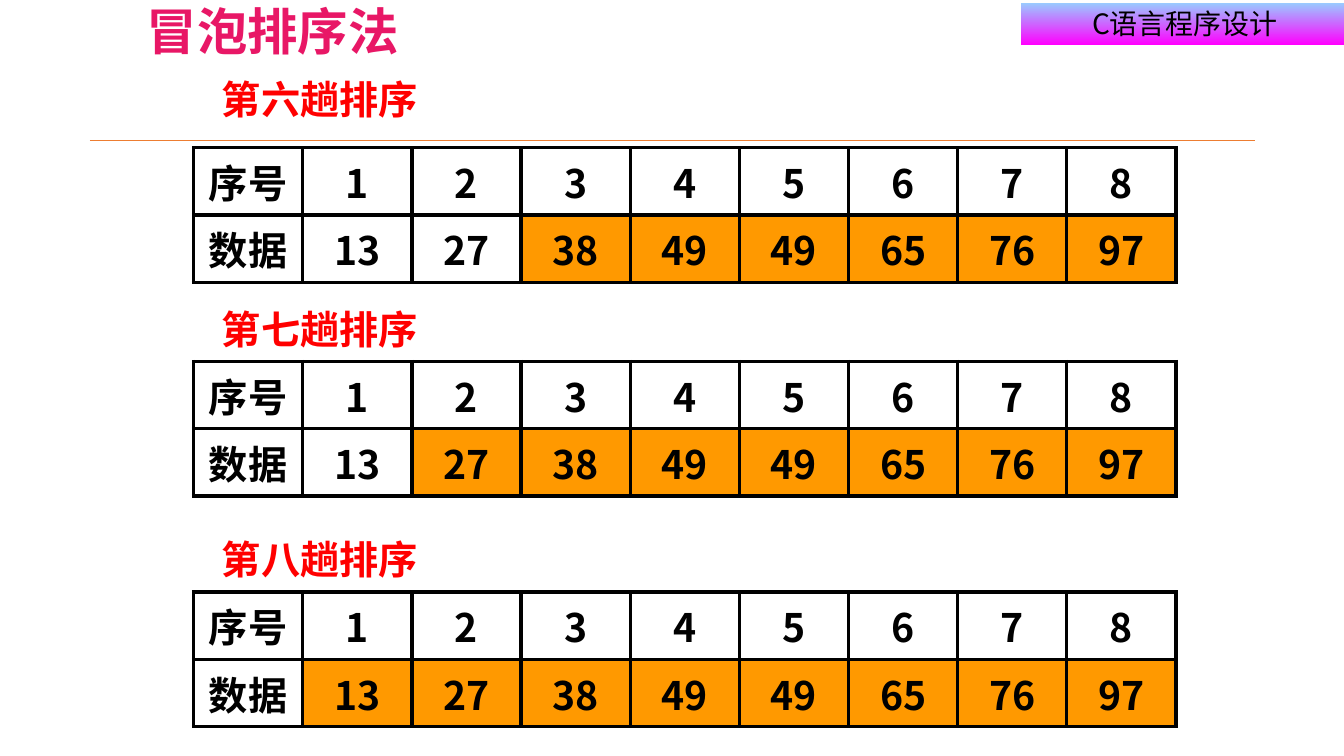
import pptx
import pptx.dml.color
import pptx.enum.shapes
import pptx.enum.text
import pptx.oxml
import pptx.oxml.ns
import pptx.util

Pt = pptx.util.Pt
RGBColor = pptx.dml.color.RGBColor
ANCHOR = pptx.enum.text.MSO_ANCHOR

BLACK = RGBColor(0x00, 0x00, 0x00)
RED = RGBColor(0xFF, 0x00, 0x00)
PINK = RGBColor(0xE8, 0x17, 0x66)
SKY = RGBColor(0x99, 0xCC, 0xFF)
MAGENTA = RGBColor(0xFF, 0x00, 0xFF)
RULE_ORANGE = RGBColor(0xED, 0x7D, 0x31)
SORTED_ORANGE = RGBColor(0xFF, 0x99, 0x00)

CJK = "Noto Sans CJK SC"
TITLE_FONT = {"name": "Noto Sans CJK JP", "size": Pt(27), "bold": True}
COURSE_FONT = {"name": CJK, "size": Pt(15), "bold": False}
PASS_FONT = {"name": "Arial", "size": Pt(21), "bold": True}
CELL_FONT = {"name": CJK, "size": Pt(21), "bold": True}

NO_MARGINS = {"margin_left": 0, "margin_right": 0, "margin_top": 0, "margin_bottom": 0}
TITLE_FRAME = {"word_wrap": False, "auto_size": pptx.enum.text.MSO_AUTO_SIZE.NONE,
               "vertical_anchor": ANCHOR.TOP, **NO_MARGINS}
LABEL_FRAME = {"word_wrap": False, "vertical_anchor": ANCHOR.MIDDLE}
CELL_FORMAT = {"vertical_anchor": ANCHOR.MIDDLE, "margin_left": Pt(5), "margin_right": Pt(5),
               "margin_top": Pt(2.7), "margin_bottom": Pt(2.7)}


def apply(target, values):
    for name, value in values.items():
        setattr(target, name, value)


def write(frame, text, font_values, color, east_asian=CJK):
    paragraph = frame.paragraphs[0]
    paragraph.alignment = pptx.enum.text.PP_ALIGN.CENTER
    run = paragraph.add_run()
    run.text = text
    apply(run.font, font_values)
    run.font.color.rgb = color
    latin = run.font._element.find(pptx.oxml.ns.qn("a:latin"))
    latin.addnext(pptx.oxml.parse_xml(
        f'<a:ea {pptx.oxml.ns.nsdecls("a")} typeface="{east_asian}"/>'))


deck = pptx.Presentation()
deck.slide_width, deck.slide_height = Pt(720), Pt(405)
slide = deck.slides.add_slide(deck.slide_layouts[5])
shapes = slide.shapes

title = shapes.title
apply(title, {"left": Pt(14.4), "top": 0, "width": Pt(263.5), "height": Pt(21.6)})
apply(title.text_frame, TITLE_FRAME)
write(title.text_frame, "冒泡排序法", TITLE_FONT, PINK, "Noto Sans CJK JP")

course = shapes.add_shape(pptx.enum.shapes.MSO_SHAPE.RECTANGLE,
                          Pt(547), Pt(1.5), Pt(175.7), Pt(22.5))
course.shadow.inherit = False
course.line.fill.background()
course.fill.gradient()
course.fill.gradient_angle = 270
for stop, color in zip(course.fill.gradient_stops, (SKY, MAGENTA)):
    stop.color.rgb = color
apply(course.text_frame, {**LABEL_FRAME, **NO_MARGINS})
write(course.text_frame, "C语言程序设计", COURSE_FONT, BLACK)

rule = shapes.add_connector(pptx.enum.shapes.MSO_CONNECTOR.STRAIGHT,
                            Pt(48.2), Pt(74.9), Pt(672.5), Pt(74.9))
rule.line.width = Pt(0.25)
rule.line.color.rgb = RULE_ORANGE
rule._element.spPr.append(pptx.oxml.parse_xml(
    f'<a:effectLst {pptx.oxml.ns.nsdecls("a")}/>'))

numbers = [13, 27, 38, 49, 49, 65, 76, 97]
rows = [["序号", *range(1, len(numbers) + 1)], ["数据", *numbers]]
passes = [
    ("第六趟排序", 36.7, 79.2, 3),
    ("第七趟排序", 159.8, 193.7, 2),
    ("第八趟排序", 283, 317.2, 1),
]

for pass_name, label_top, table_top, first_sorted in passes:
    table = shapes.add_table(2, 9, Pt(103.7), Pt(table_top), Pt(526.5), Pt(72)).table
    apply(table, {"first_row": False, "horz_banding": False})
    for column in table.columns:
        column.width = Pt(58.5)
    for row_index, values in enumerate(rows):
        table.rows[row_index].height = Pt(36)
        for column_index, value in enumerate(values):
            cell = table.cell(row_index, column_index)
            apply(cell, CELL_FORMAT)
            write(cell.text_frame, str(value), CELL_FONT, BLACK)
            for side in ("lnL", "lnR", "lnT", "lnB"):
                cell._tc.get_or_add_tcPr().append(pptx.oxml.parse_xml(
                    f'<a:{side} {pptx.oxml.ns.nsdecls("a")} w="{Pt(2)}">'
                    f'<a:solidFill><a:srgbClr val="{BLACK}"/></a:solidFill></a:{side}>'))
            if row_index == 1 and column_index >= first_sorted:
                cell.fill.solid()
                cell.fill.fore_color.rgb = SORTED_ORANGE
            else:
                cell.fill.background()

    label = shapes.add_textbox(Pt(110.9), Pt(label_top), Pt(121), Pt(32.4))
    apply(label.text_frame, LABEL_FRAME)
    write(label.text_frame, pass_name, PASS_FONT, RED)

deck.save("out.pptx")
